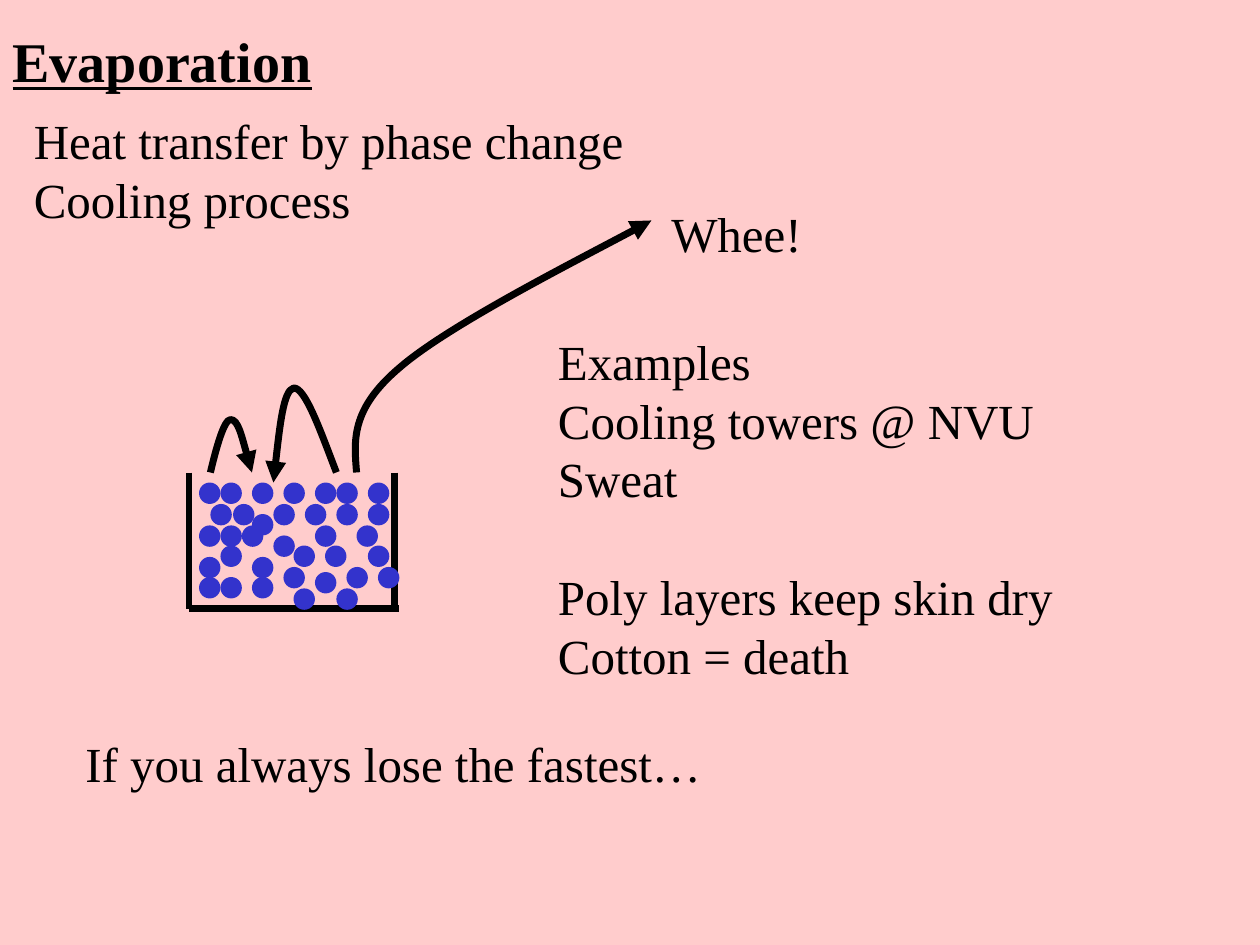
import pptx
import pptx.dml.color
import pptx.enum.shapes
import pptx.enum.text
import pptx.oxml
import pptx.oxml.ns
import pptx.util
from pptx.util import Inches

COLORS = {"background": "FFCCCC", "ink": "000000", "water": "3333CC"}
FONT = "Times New Roman"
DOT_SIZE = 0.17
TANK_LINES = [
    (1.5, 3.75, 1.5, 4.83),
    (1.5, 4.83, 3.17, 4.83),
    (3.13, 3.75, 3.13, 4.83),
]
MOLECULE_ROWS = {
    3.83: [1.58, 1.75, 2, 2.25, 2.5, 2.67, 2.92],
    4: [1.67, 1.85, 2.17, 2.42, 2.67, 2.92],
    4.08: [2],
    4.17: [1.58, 1.75, 1.92, 2.5, 2.83],
    4.25: [2.17],
    4.33: [1.75, 2.33, 2.58, 2.92],
    4.42: [1.58, 2],
    4.5: [2.25, 2.75, 3],
    4.54: [2.5],
    4.58: [1.58, 1.75, 2],
    4.67: [2.33, 2.67],
}
SHORT_HOP = [(1.67, 3.75), (1.72, 3.54), (1.78, 3.33), (1.83, 3.33),
             (1.89, 3.33), (1.94, 3.54), (2, 3.75)]
TALL_HOP = [(2.17, 3.83), (2.21, 3.47), (2.25, 3.1), (2.33, 3.08),
            (2.42, 3.07), (2.54, 3.41), (2.67, 3.75)]
ESCAPE = [(2.83, 3.75), (2.81, 3.5), (2.78, 3.25), (3.17, 2.92),
          (3.56, 2.58), (4.83, 1.94), (5.17, 1.75)]


def color(name):
    return pptx.dml.color.RGBColor.from_string(COLORS[name])


def draw_line(line):
    line.color.rgb = color("ink")
    line.width = pptx.util.Pt(4)


def write_text(box, text, size=28, bold=False, underline=False, wrap=True, gap_before=None):
    frame = box.text_frame
    frame.word_wrap = wrap
    frame.auto_size = pptx.enum.text.MSO_AUTO_SIZE.SHAPE_TO_FIT_TEXT
    frame.vertical_anchor = pptx.enum.text.MSO_ANCHOR.TOP
    for index, words in enumerate(text.split("\n")):
        para = frame.paragraphs[0] if index == 0 else frame.add_paragraph()
        para.alignment = pptx.enum.text.PP_ALIGN.LEFT
        if index == gap_before:
            para.space_before = pptx.util.Pt(33.6)
        span = para.add_run()
        span.text = words
        span.font.name = FONT
        span.font.size = pptx.util.Pt(size)
        span.font.bold = bold
        span.font.underline = underline
        span.font.color.rgb = color("ink")


def add_text(shapes, place, text, **style):
    box = shapes.add_textbox(*map(Inches, place))
    write_text(box, text, **style)


def add_title(page, place, text):
    title = page.shapes.title
    title.left, title.top, title.width, title.height = map(Inches, place)
    write_text(title, text, size=32, bold=True, underline=True)


def add_tank(shapes):
    for ends in TANK_LINES:
        side = shapes.add_connector(pptx.enum.shapes.MSO_CONNECTOR.STRAIGHT, *map(Inches, ends))
        draw_line(side.line)
        side._element.spPr.append(pptx.oxml.parse_xml(
            f"<a:effectLst {pptx.oxml.ns.nsdecls('a')}/>"))


def add_molecule(shapes, left, top):
    dot = shapes.add_shape(pptx.enum.shapes.MSO_SHAPE.OVAL,
                           *map(Inches, (left, top, DOT_SIZE, DOT_SIZE)))
    dot.shadow.inherit = False
    dot.fill.solid()
    dot.fill.fore_color.rgb = color("water")
    dot.line.fill.background()


def add_curve(shapes, points, arrow_end):
    start, *others = [(Inches(x), Inches(y)) for x, y in points]
    builder = shapes.build_freeform(*start)
    builder.add_line_segments(others, close=False)
    curve = builder.convert_to_shape()
    curve.shadow.inherit = False
    curve.fill.background()
    draw_line(curve.line)
    namespace = pptx.oxml.ns.nsdecls("a")
    curve.line._get_or_add_ln().append(
        pptx.oxml.parse_xml(f'<a:{arrow_end} {namespace} type="triangle"/>'))
    segments = curve._element.xpath(".//a:lnTo")
    for first in range(0, len(segments), 3):
        bezier = pptx.oxml.parse_xml(f"<a:cubicBezTo {namespace}/>")
        segments[first].addprevious(bezier)
        for segment in segments[first:first + 3]:
            bezier.append(segment[0])
            segment.getparent().remove(segment)


def main():
    deck = pptx.Presentation()
    deck.slide_width, deck.slide_height = Inches(10), Inches(7.5)
    page = deck.slides.add_slide(deck.slide_layouts.get_by_name("Title Only"))
    page.background.fill.solid()
    page.background.fill.fore_color.rgb = color("background")

    add_title(page, (0, 0.16, 2.7, 0.63), "Evaporation")
    add_text(page.shapes, (0.17, 0.83, 4.92, 1.03),
             "Heat transfer by phase change\nCooling process")

    tank = page.shapes.add_group_shape()
    add_tank(tank.shapes)
    for top, lefts in MOLECULE_ROWS.items():
        for left in lefts:
            add_molecule(tank.shapes, left, top)

    add_curve(page.shapes, SHORT_HOP, "tailEnd")
    add_curve(page.shapes, TALL_HOP, "headEnd")
    escape = page.shapes.add_group_shape()
    add_curve(escape.shapes, ESCAPE, "tailEnd")
    add_text(escape.shapes, (5.23, 1.57, 1.24, 0.57), "Whee!", wrap=False)

    add_text(page.shapes, (0.58, 5.77, 5.83, 0.57), "If you always lose the fastest…")
    add_text(page.shapes, (4.33, 2.58, 5.5, 2.9),
             "Examples\nCooling towers @ NVU\nSweat\nPoly layers keep skin dry\nCotton = death",
             gap_before=3)
    deck.save("out.pptx")


if __name__ == "__main__":
    main()
